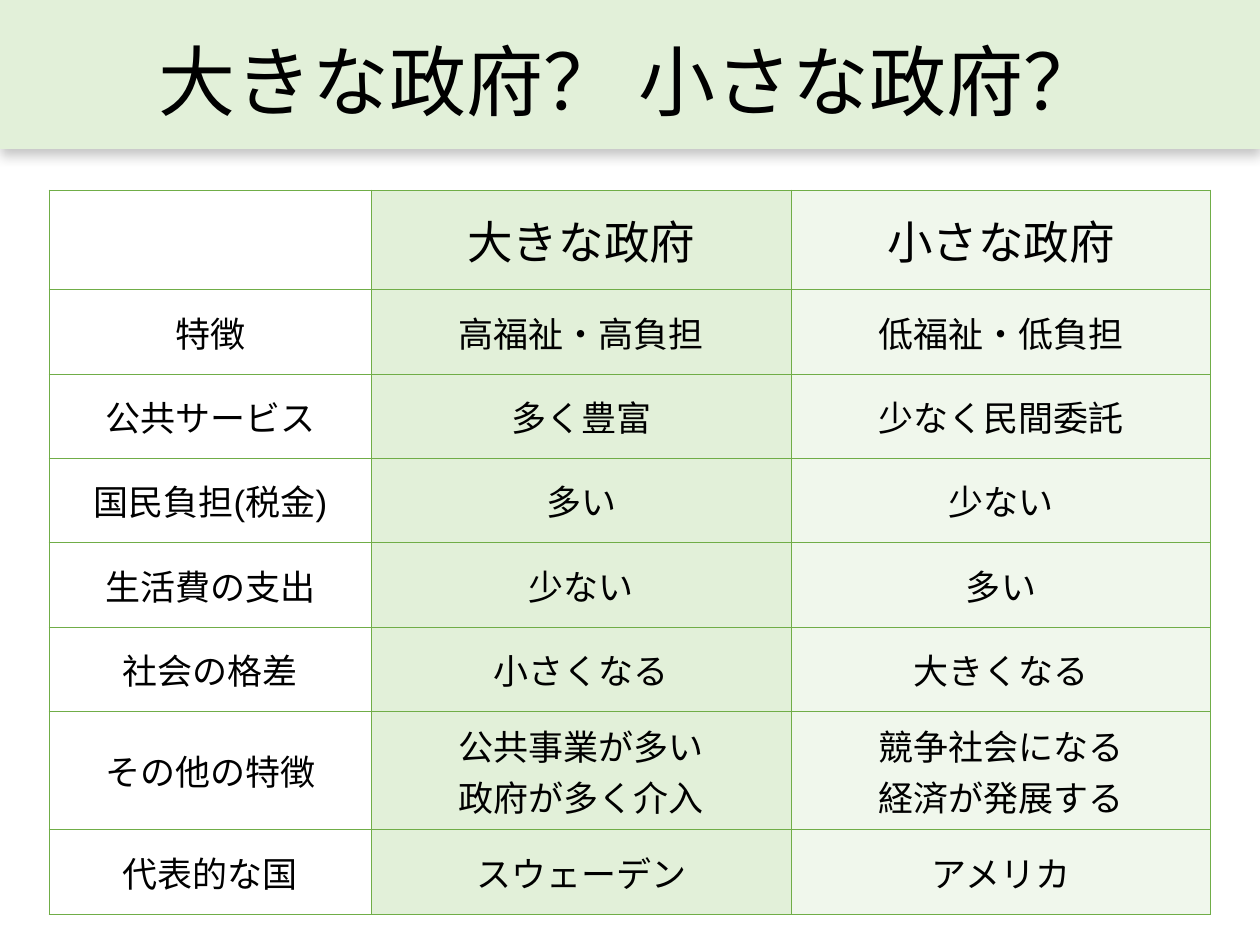
from lxml.etree import SubElement
from pptx import Presentation
from pptx.dml.color import RGBColor
from pptx.enum.text import MSO_ANCHOR as Anchor, MSO_AUTO_SIZE as AutoSize, PP_ALIGN as Align
from pptx.oxml.ns import qn
from pptx.util import Cm, Pt

BLACK = RGBColor(0x00, 0x00, 0x00)
WHITE = RGBColor(0xFF, 0xFF, 0xFF)
GREEN = RGBColor(0x70, 0xAD, 0x47)
LIGHT_GREEN = RGBColor(0xE2, 0xF0, 0xD9)
PALE_GREEN = RGBColor(0xF0, 0xF7, 0xEC)

LATIN_FONT = "Arial"
JAPANESE_FONT = "Noto Sans CJK JP"

TITLE = "大きな政府？ 小さな政府？"
ROWS = [
    ("", "大きな政府", "小さな政府"),
    ("特徴", "高福祉・高負担", "低福祉・低負担"),
    ("公共サービス", "多く豊富", "少なく民間委託"),
    ("国民負担(税金)", "多い", "少ない"),
    ("生活費の支出", "少ない", "多い"),
    ("社会の格差", "小さくなる", "大きくなる"),
    ("その他の特徴", "公共事業が多い\n政府が多く介入", "競争社会になる\n経済が発展する"),
    ("代表的な国", "スウェーデン", "アメリカ"),
]
COLUMN_WIDTHS = [6.5, 8.46, 8.46]
COLUMN_FILLS = [WHITE, LIGHT_GREEN, PALE_GREEN]
HEADER_HEIGHT, LINE_HEIGHT, DOUBLE_HEIGHT = 2.01, 1.7, 2.39


def write_text(frame, text, size, space_after=0):
    """Write centred text, one paragraph per line."""
    frame.text = text
    for paragraph in frame.paragraphs:
        paragraph.alignment = Align.CENTER
        paragraph.space_before = Pt(0)
        paragraph.space_after = Pt(space_after)
        for run in paragraph.runs:
            run.font.size = Pt(size)
            run.font.name = LATIN_FONT
            run.font.color.rgb = BLACK
            SubElement(run.font._element, qn("a:ea"), typeface=JAPANESE_FONT)


def add_shadow(shape, blur, distance, opacity):
    """Cast a soft black shadow straight down."""
    effects = SubElement(shape._element.spPr, qn("a:effectLst"))
    shadow = SubElement(effects, qn("a:outerShdw"), blurRad=str(Pt(blur)),
                        dist=str(Pt(distance)), dir=str(90 * 60000),
                        algn="t", rotWithShape="0")
    color = SubElement(shadow, qn("a:srgbClr"), val=str(BLACK))
    SubElement(color, qn("a:alpha"), val=str(opacity * 1000))


def format_title(title, width):
    title.left, title.top, title.width, title.height = 0, 0, width, Cm(3)
    title.fill.solid()
    title.fill.fore_color.rgb = LIGHT_GREEN
    add_shadow(title, blur=7, distance=3, opacity=23)
    frame = title.text_frame
    frame.auto_size = AutoSize.NONE
    frame.word_wrap = True
    frame.vertical_anchor = Anchor.MIDDLE
    frame.margin_left = frame.margin_right = frame.margin_bottom = 0
    frame.margin_top = Cm(0.2)
    write_text(frame, TITLE, 44)


def add_borders(cell):
    properties = cell._tc.get_or_add_tcPr()
    for side in ("lnL", "lnR", "lnT", "lnB"):
        line = SubElement(properties, qn(f"a:{side}"), w=str(Pt(0.5)))
        fill = SubElement(line, qn("a:solidFill"))
        SubElement(fill, qn("a:srgbClr"), val=str(GREEN))


def row_height(index):
    if index == 0:
        return HEADER_HEIGHT
    return DOUBLE_HEIGHT if "\n" in ROWS[index][1] else LINE_HEIGHT


def add_comparison_table(slide):
    heights = [row_height(index) for index in range(len(ROWS))]
    table = slide.shapes.add_table(
        len(ROWS), len(COLUMN_WIDTHS), Cm(0.99), Cm(3.83),
        Cm(sum(COLUMN_WIDTHS)), Cm(sum(heights))).table
    for column, width in zip(table.columns, COLUMN_WIDTHS):
        column.width = Cm(width)
    for row_index, (row, height, texts) in enumerate(zip(table.rows, heights, ROWS)):
        row.height = Cm(height)
        size, space_after = (26, 3) if row_index == 0 else (20, 0)
        for cell, text, color in zip(row.cells, texts, COLUMN_FILLS):
            add_borders(cell)
            cell.fill.solid()
            cell.fill.fore_color.rgb = color
            cell.vertical_anchor = Anchor.MIDDLE
            if text:
                write_text(cell.text_frame, text, size, space_after)


def main():
    presentation = Presentation()
    presentation.slide_width = Cm(25.4)
    presentation.slide_height = Cm(19.05)
    slide = presentation.slides.add_slide(presentation.slide_layouts[5])

    # Title band
    format_title(slide.shapes.title, presentation.slide_width)
    # Comparison of big and small government
    add_comparison_table(slide)

    presentation.save("out.pptx")


if __name__ == "__main__":
    main()
